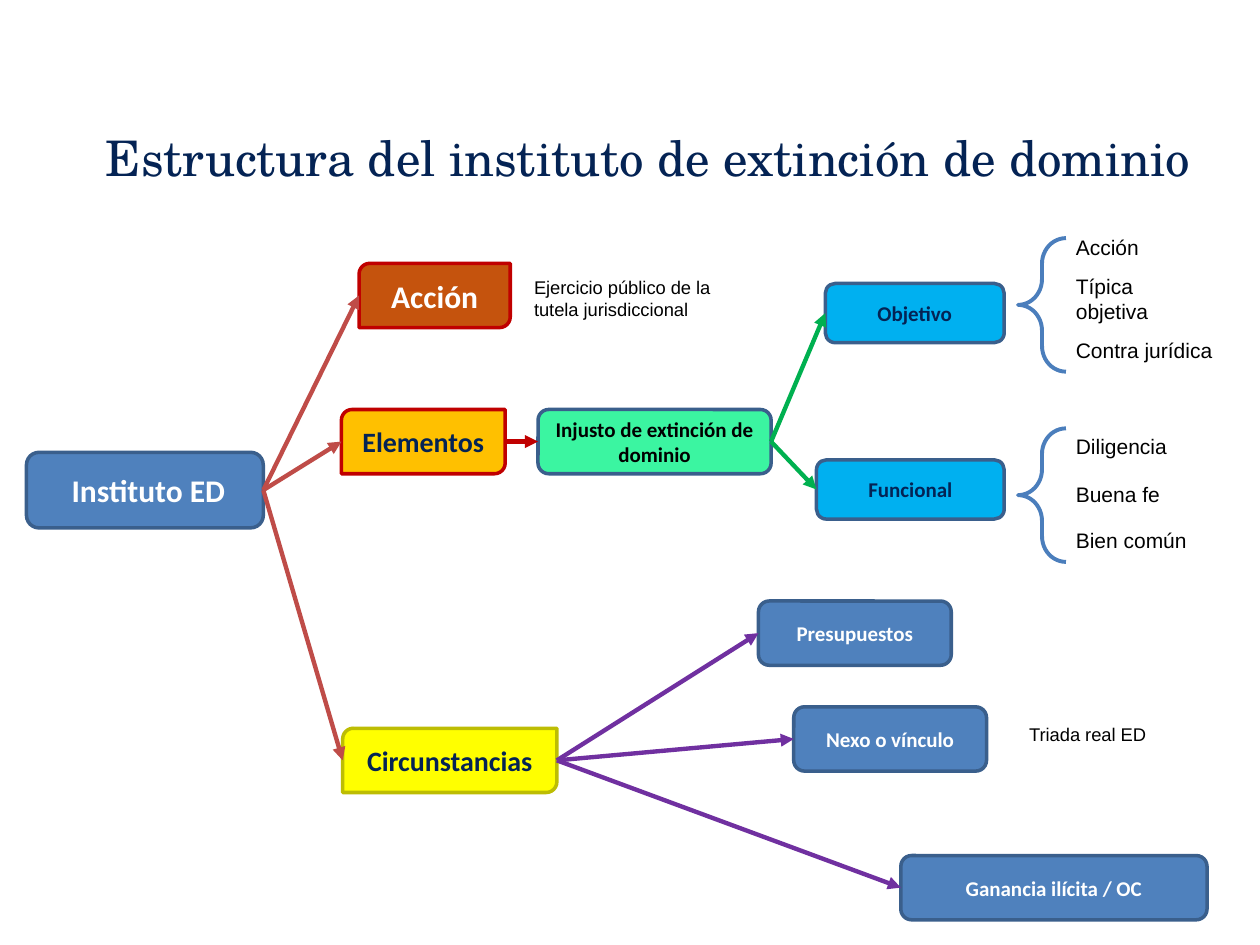
from lxml import etree
from pptx import Presentation
from pptx.dml.color import RGBColor
from pptx.enum import shapes, text
from pptx.oxml.ns import qn
from pptx.util import Inches, Pt

NAVY, WHITE, BLACK = "042354", "FFFFFF", "000000"
BLUE, EDGE, CYAN = "4F81BD", "3A5F8C", "00B0F0"
RED, BRICK, GREEN, PURPLE = "C00000", "BF4C48", "00B050", "7030A0"
ROUND = shapes.MSO_SHAPE.ROUNDED_RECTANGLE
DIAGONAL = shapes.MSO_SHAPE.ROUND_2_DIAG_RECTANGLE
# Connection sites (left, right) differ between the two presets
SITES = {ROUND: (1, 3), DIAGONAL: (2, 0)}

TITLE = "Estructura del instituto de extinción de dominio"

# label: (preset, left, top, width, height, fill, line, font size, font colour)
BOXES = {
    " Instituto ED": (ROUND, 0.21, 3.59, 1.88, 0.6, BLUE, EDGE, 18, WHITE),
    "Acción": (DIAGONAL, 2.85, 2.09, 1.2, 0.51, "C5530D", RED, 18, WHITE),
    "Elementos": (DIAGONAL, 2.71, 3.25, 1.3, 0.51, "FFC000", RED, 16, NAVY),
    "Circunstancias": (DIAGONAL, 2.72, 5.78, 1.7, 0.51, "FFFF00", "BDBD03", 16, NAVY),
    "Injusto de extinción de dominio": (ROUND, 4.27, 3.25, 1.85, 0.51, "3BF5A1", EDGE, 12, BLACK),
    "Objetivo": (ROUND, 6.55, 2.25, 1.42, 0.47, CYAN, EDGE, 12, NAVY),
    "Funcional": (ROUND, 6.48, 3.65, 1.49, 0.47, CYAN, EDGE, 12, NAVY),
    "Presupuestos": (ROUND, 6.02, 4.77, 1.53, 0.51, BLUE, EDGE, 12, WHITE),
    "Nexo o vínculo": (ROUND, 6.3, 5.61, 1.53, 0.51, BLUE, EDGE, 12, WHITE),
    "Ganancia ilícita / OC": (ROUND, 7.15, 6.79, 2.43, 0.51, BLUE, EDGE, 12, WHITE),
}

# parent, children, colour
BRANCHES = [
    (" Instituto ED", ["Acción", "Elementos", "Circunstancias"], BRICK),
    ("Elementos", ["Injusto de extinción de dominio"], RED),
    ("Injusto de extinción de dominio", ["Objetivo", "Funcional"], GREEN),
    ("Circunstancias", ["Presupuestos", "Nexo o vínculo", "Ganancia ilícita / OC"], PURPLE),
]

# text, left, top, width, height, font size
NOTES = [
    ("Ejercicio público de la tutela jurisdiccional", 4.14, 2.14, 1.63, 0.45, 10.5),
    ("Acción", 8.44, 1.81, 0.85, 0.3, 12),
    ("Típica objetiva", 8.44, 2.12, 0.85, 0.5, 12),
    ("Contra jurídica", 8.44, 2.63, 1.38, 0.3, 12),
    ("Diligencia", 8.44, 3.39, 1.05, 0.3, 12),
    ("Buena fe", 8.44, 3.77, 0.95, 0.3, 12),
    ("Bien común", 8.44, 4.14, 1.12, 0.3, 12),
    ("Triada real ED", 8.07, 5.69, 1.63, 0.28, 10.5),
]
BRACE_TOPS = [1.89, 3.4]


def rgb(value):
    return RGBColor.from_string(value)


def write(shape, words, font, size, color, bold=False,
          align=text.PP_ALIGN.LEFT, anchor=text.MSO_ANCHOR.TOP):
    tf = shape.text_frame
    tf.word_wrap = True
    tf.vertical_anchor = anchor
    p = tf.paragraphs[0]
    p.alignment = align
    r = p.add_run()
    r.text = words
    r.font.name, r.font.size, r.font.bold = font, Pt(size), bold
    r.font.color.rgb = rgb(color)


def add_box(s, label, preset, left, top, width, height, fill, line, size, color):
    sp = s.shapes.add_shape(preset, *map(Inches, (left, top, width, height)))
    sp.shadow.inherit = False
    sp.fill.solid()
    sp.fill.fore_color.rgb = rgb(fill)
    sp.line.color.rgb = rgb(line)
    sp.line.width = Pt(2)
    write(sp, label, "Calibri", size, color, True,
          text.PP_ALIGN.CENTER, text.MSO_ANCHOR.MIDDLE)
    return sp


def add_arrow(s, parent, child, color):
    """Join the right side of parent to the left side of child."""
    start = parent.left + parent.width, parent.top + parent.height // 2
    end = child.left, child.top + child.height // 2
    c = s.shapes.add_connector(shapes.MSO_CONNECTOR.STRAIGHT, *start, *end)
    c.begin_connect(parent, SITES[parent.auto_shape_type][1])
    c.end_connect(child, SITES[child.auto_shape_type][0])
    # Connecting assumes rectangle sites, so the ends are set again
    c.begin_x, c.begin_y = start
    c.end_x, c.end_y = end
    c.line.color.rgb = rgb(color)
    c.line.width = Pt(2.5)
    etree.SubElement(c.line._get_or_add_ln(), qn("a:tailEnd"), type="triangle")
    etree.SubElement(c._element.spPr, qn("a:effectLst"))


def add_brace(s, top):
    sp = s.shapes.add_shape(shapes.MSO_SHAPE.LEFT_BRACE,
                            *map(Inches, (8.08, top, 0.38, 1.06)))
    sp.adjustments[0], sp.adjustments[1] = 0.535, 0.5
    sp.shadow.inherit = False
    sp.fill.background()
    sp.line.color.rgb = rgb("4B7EBC")
    sp.line.width = Pt(2.25)


def main():
    prs = Presentation()
    prs.slide_width, prs.slide_height = Inches(10), Inches(7.5)
    s = prs.slides.add_slide(prs.slide_layouts[5])

    title = s.shapes.title
    title.left, title.top, title.width, title.height = map(Inches, (0.74, 0.91, 8.9, 0.67))
    tf = title.text_frame
    tf.margin_left = tf.margin_right = tf.margin_top = tf.margin_bottom = Inches(0.1)
    write(title, TITLE, "TeX Gyre Schola", 28, NAVY)

    boxes = {label: add_box(s, label, *look) for label, look in BOXES.items()}
    for parent, children, color in BRANCHES:
        for child in children:
            add_arrow(s, boxes[parent], boxes[child], color)

    for top in BRACE_TOPS:
        add_brace(s, top)
    for words, left, top, width, height, size in NOTES:
        box = s.shapes.add_textbox(*map(Inches, (left, top, width, height)))
        write(box, words, "Arial", size, BLACK)

    prs.save("out.pptx")


if __name__ == "__main__":
    main()
